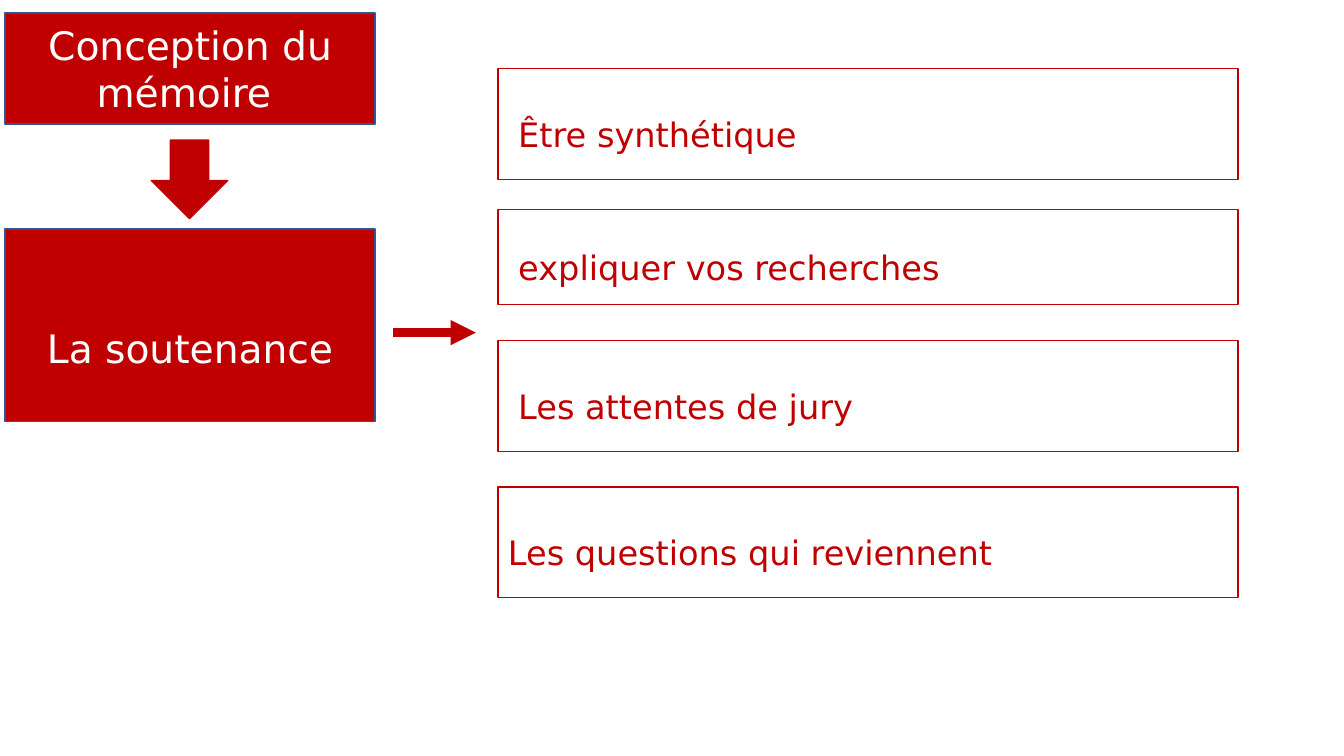
import pptx
import pptx.util
import pptx.dml.color
import pptx.enum.shapes
import pptx.enum.text
import pptx.oxml.ns
import lxml.etree

Inches = pptx.util.Inches
SHAPE = pptx.enum.shapes.MSO_SHAPE
ALIGN = pptx.enum.text.PP_ALIGN

FONT = "DejaVu Sans"
COLOURS = {"red": "C00000", "blue": "325491", "white": "FFFFFF"}


def colour(name):
    return pptx.dml.color.RGBColor.from_string(COLOURS[name])


def add_block(page, kind, bounds, line, fill=None):
    """Add a preset shape with a thin outline and an optional fill."""
    block = page.shapes.add_shape(kind, *(Inches(value) for value in bounds))
    block.shadow.inherit = False
    if fill:
        block.fill.solid()
        block.fill.fore_color.rgb = colour(fill)
    else:
        block.fill.background()
    block.line.color.rgb = colour(line)
    block.line.width = pptx.util.Pt(1)
    return block


def write(block, text, size, ink, align):
    frame = block.text_frame
    frame.word_wrap = True
    frame.vertical_anchor = pptx.enum.text.MSO_ANCHOR.MIDDLE
    para = frame.paragraphs[0]
    para.text = text
    para.alignment = align
    para.font.name = FONT
    para.font.size = pptx.util.Pt(size)
    para.font.color.rgb = colour(ink)
    return para


def add_step(page, text, top, height, inset_top=0.05):
    """Add a red step of the left column."""
    block = add_block(page, SHAPE.RECTANGLE, (0.05, top, 3.67, height), "blue", "red")
    block.text_frame.margin_top = Inches(inset_top)
    write(block, text, 28, "white", ALIGN.CENTER)


def add_point(page, text, top, height, inset_left):
    """Add an outlined point of the right column."""
    block = add_block(page, SHAPE.RECTANGLE, (4.94, top, 7.34, height), "red")
    block.text_frame.margin_left = Inches(inset_left)
    para = write(block, text, 24, "red", ALIGN.LEFT)
    para.line_spacing = 1.5


def add_arrow(page, left, right, y):
    arrow = page.shapes.add_connector(
        pptx.enum.shapes.MSO_CONNECTOR.STRAIGHT,
        Inches(left), Inches(y), Inches(right), Inches(y))
    arrow.line.color.rgb = colour("red")
    arrow.line.width = pptx.util.Pt(6)
    qn = pptx.oxml.ns.qn
    lxml.etree.SubElement(arrow.line._get_or_add_ln(), qn("a:tailEnd"), type="triangle")
    lxml.etree.SubElement(arrow._element.spPr, qn("a:effectLst"))


def main():
    deck = pptx.Presentation()
    deck.slide_width, deck.slide_height = Inches(13.33), Inches(7.5)
    page = deck.slides.add_slide(deck.slide_layouts[6])

    # Steps on the left
    add_step(page, "Conception du mémoire ", 0.13, 1.1)
    add_block(page, SHAPE.DOWN_ARROW, (1.5, 1.39, 0.76, 0.78), "red", "red")
    add_step(page, "La soutenance", 2.27, 1.91, inset_top=0.5)

    # Arrow towards the points
    add_arrow(page, 3.9, 4.72, 3.3)

    # Points on the right
    points = [
        ("Être synthétique", 0.68, 1.1, 0.2),
        ("expliquer vos recherches", 2.08, 0.94, 0.2),
        ("Les attentes de jury", 3.38, 1.1, 0.2),
        ("Les questions qui reviennent", 4.83, 1.1, 0.1),
    ]
    for text, top, height, inset_left in points:
        add_point(page, text, top, height, inset_left)

    deck.save("out.pptx")


if __name__ == "__main__":
    main()
